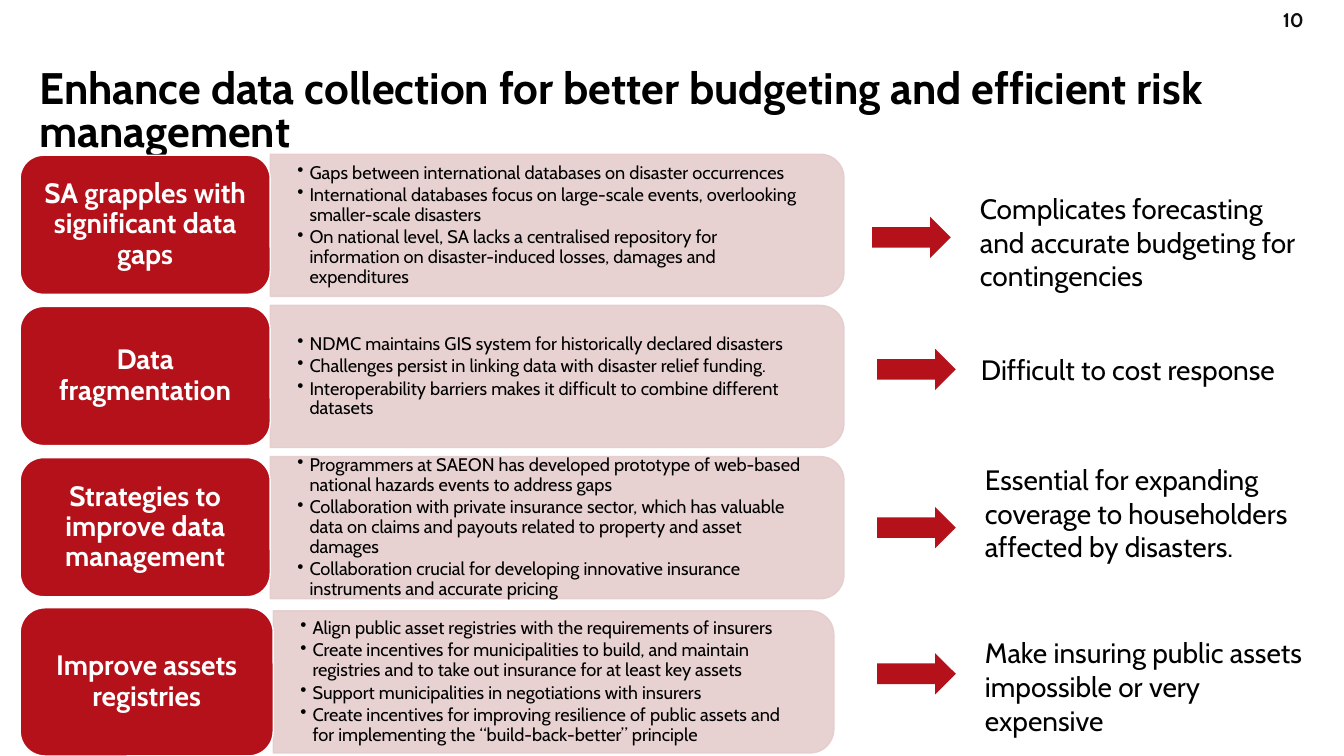
from lxml.etree import SubElement
from pptx import Presentation
from pptx.dml.color import RGBColor
from pptx.enum.shapes import MSO_SHAPE
from pptx.enum.text import MSO_ANCHOR, MSO_AUTO_SIZE, PP_ALIGN
from pptx.oxml.ns import qn
from pptx.util import Inches, Pt

COLORS = {"red": "B4111A", "pink": "E5CCCD", "white": "FFFFFF",
          "black": "000000", "gray": "0D0D0D"}


def write(shape, *texts, size=20, color="black", bold=False, align=PP_ALIGN.LEFT,
          anchor=MSO_ANCHOR.MIDDLE, inset=(0.1, 0.05), line=None, after=0,
          bullet=False, fit=MSO_AUTO_SIZE.NONE):
    """Fill a shape with one paragraph per text."""
    frame = shape.text_frame
    frame.word_wrap = True
    frame.auto_size = fit
    frame.vertical_anchor = anchor
    frame.margin_left = frame.margin_right = Inches(inset[0])
    frame.margin_top = frame.margin_bottom = Inches(inset[1])
    for i, text in enumerate(texts):
        para = frame.add_paragraph() if i else frame.paragraphs[0]
        para.text = text
        para.alignment = align
        para.space_before = Pt(0)
        para.space_after = Pt(after)
        if line:
            para.line_spacing = line
        if bullet:
            props = para._p.get_or_add_pPr()
            props.set("marL", str(Inches(0.12)))
            props.set("indent", str(-Inches(0.12)))
            SubElement(props, qn("a:buChar"), char="•")
        font = para.runs[0].font
        font.name, font.size, font.bold = "Cabin", Pt(size), bold
        font.color.rgb = RGBColor.from_string(COLORS[color])


def draw(kind, left, top, width, height, fill, edge=None, alpha=None):
    shape = slide.shapes.add_shape(kind, Inches(left), Inches(top),
                                   Inches(width), Inches(height))
    shape.shadow.inherit = False
    paints = [shape.fill]
    shape.fill.solid()
    shape.fill.fore_color.rgb = RGBColor.from_string(COLORS[fill])
    if edge:
        shape.line.width = Pt(1)
        shape.line.color.rgb = RGBColor.from_string(COLORS[edge])
        paints.append(shape.line.fill)
    else:
        shape.line.fill.background()
    if alpha:
        for tint in shape._element.spPr.iter(qn("a:srgbClr")):
            SubElement(tint, qn("a:alpha"), val=str(alpha * 1000))
    return shape


deck = Presentation()
deck.slide_width, deck.slide_height = Inches(13.33), Inches(7.5)
slide = deck.slides.add_slide(deck.slide_layouts[5])

title = slide.shapes.title
title.left, title.top = Inches(0.29), Inches(0.63)
title.width, title.height = Inches(12.73), Inches(0.98)
write(title, "Enhance data collection for better budgeting and efficient risk management",
      size=31.5, bold=True, line=Pt(30.8))

number = slide.shapes.add_textbox(Inches(12.44), 0, Inches(0.59), Inches(0.4))
write(number, "10", size=14, color="gray", bold=True, align=PP_ALIGN.RIGHT)

# Label box (top, width, height), panel (top, width), arrow and effect (left, top)
rows = [
    ("SA grapples with significant data gaps", (1.54, 2.48, 1.38), (1.53, 5.69),
     ["Gaps between international databases on disaster occurrences",
      "International databases focus on large-scale events, overlooking smaller-scale disasters",
      "On national level, SA lacks a centralised repository for information on "
      "disaster-induced losses, damages and expenditures"],
     (8.65, 2.15), (9.62, 1.85, 1.11),
     "Complicates forecasting and accurate budgeting for contingencies"),
    ("Data fragmentation", (3.04, 2.48, 1.38), (3.03, 5.69),
     ["NDMC maintains GIS system for historically declared disasters",
      "Challenges persist in linking data with disaster relief funding.",
      "Interoperability barriers makes it difficult to combine different datasets"],
     (8.7, 3.46), (9.63, 3.45, 0.44), "Difficult to cost response"),
    ("Strategies to improve data management", (4.54, 2.48, 1.38), (4.53, 5.69),
     ["Programmers at SAEON has developed prototype of web-based national hazards "
      "events to address gaps",
      "Collaboration with private insurance sector, which has valuable data on claims "
      "and payouts related to property and asset damages",
      "Collaboration crucial for developing innovative insurance instruments and "
      "accurate pricing"],
     (8.7, 5.03), (9.67, 4.54, 1.11),
     "Essential for expanding coverage to householders affected by disasters."),
    ("Improve assets registries", (6.03, 2.51, 1.47), (6.06, 5.56),
     ["Align public asset registries with the requirements of insurers",
      "Create incentives for municipalities to build, and maintain registries and to "
      "take out insurance for at least key assets",
      "Support municipalities in negotiations with insurers",
      "Create incentives for improving resilience of public assets and for implementing "
      "the “build-back-better” principle"],
     (8.7, 6.48), (9.67, 6.26, 1.11),
     "Make insuring public assets impossible or very expensive"),
]
EDGE, DEEP = 0.2, 1.41

for label, (top, wide, high), (y, span), points, arrow, (left, level, tall), effect in rows:
    x = EDGE + wide
    # The panel is a tall shape turned a quarter, so its round corners face right
    panel = draw(MSO_SHAPE.ROUND_2_SAME_RECTANGLE, x + (span - DEEP) / 2,
                 y + (DEEP - span) / 2, DEEP, span, "pink", "pink", 90)
    panel.rotation = 90
    body = slide.shapes.add_textbox(Inches(x), Inches(y + 0.07),
                                    Inches(span - 0.07), Inches(DEEP - 0.14))
    write(body, *points, size=13, inset=(0.27, 0.14), line=0.9, after=2, bullet=True)

    box = draw(MSO_SHAPE.ROUNDED_RECTANGLE, EDGE, top, wide, high, "red", "white")
    write(box, label, color="white", bold=True, align=PP_ALIGN.CENTER,
          inset=(0.08, 0.04), line=0.9)

    draw(MSO_SHAPE.RIGHT_ARROW, *arrow, 0.78, 0.41, "red")
    note = slide.shapes.add_textbox(Inches(left), Inches(level), Inches(3.49), Inches(tall))
    write(note, effect, anchor=MSO_ANCHOR.TOP, fit=MSO_AUTO_SIZE.SHAPE_TO_FIT_TEXT)

deck.save("out.pptx")
